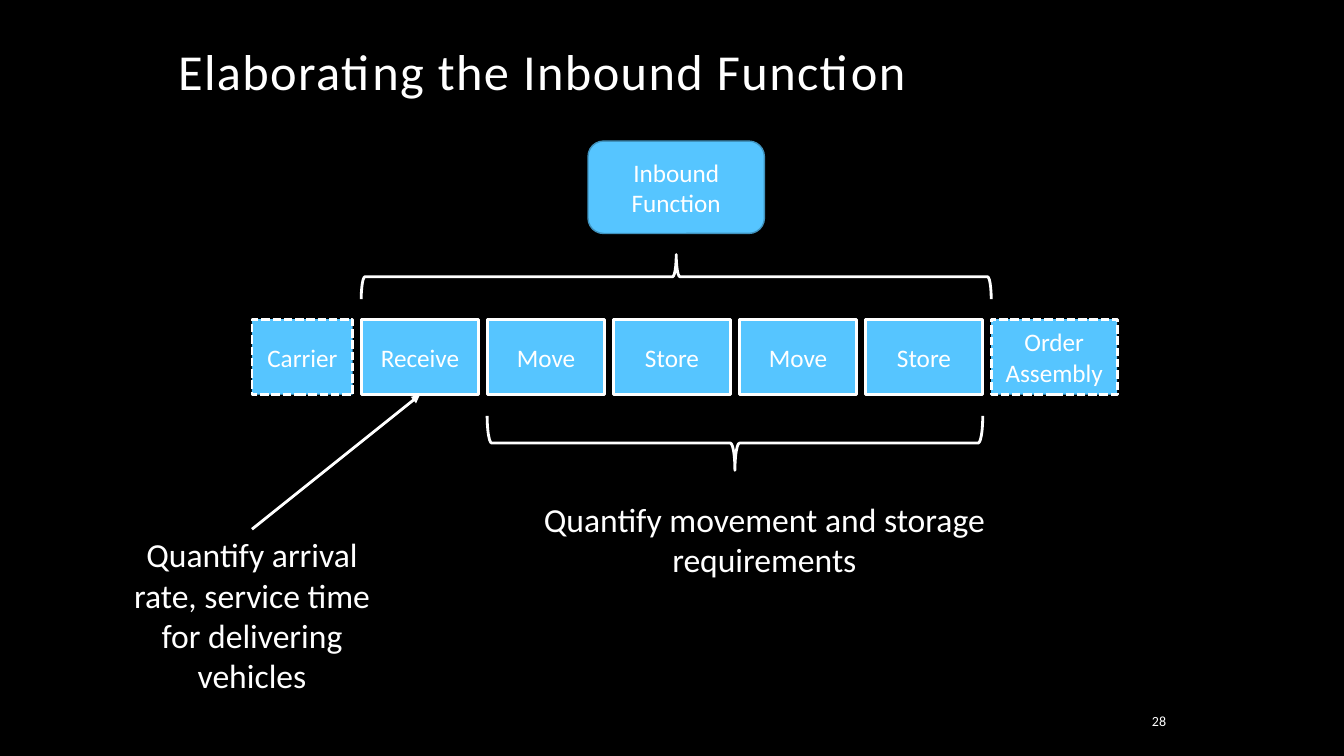
from lxml.etree import SubElement
from pptx import Presentation
from pptx.dml.color import RGBColor
from pptx.enum.dml import MSO_LINE
from pptx.enum.shapes import MSO_CONNECTOR, MSO_SHAPE
from pptx.enum.text import MSO_ANCHOR, MSO_AUTO_SIZE, PP_ALIGN
from pptx.oxml.ns import qn
from pptx.util import Inches, Pt

COLORS = {"background": "000000", "text": "FFFFFF", "box": "56C5FF", "edge": "4092BD"}
GRID = Inches(1) / 12  # the slide is 160 columns by 90 rows
COLUMNS, ROWS = 160, 90
STEP_TOP, STEP_HEIGHT, GAP = 38, 9, 1
STEPS = [("Carrier", 12, True), ("Receive", 14, False), ("Move", 14, False),
         ("Store", 14, False), ("Move", 14, False), ("Store", 14, False),
         ("Order Assembly", 15, True)]


def color(name):
    return RGBColor.from_string(COLORS[name])


def grid(*lengths):
    return [round(length * GRID) for length in lengths]


class FlowSlide:
    def __init__(self, presentation):
        self.slide = presentation.slides.add_slide(presentation.slide_layouts[5])
        self.shapes = self.slide.shapes
        fill = self.slide.background.fill
        fill.solid()
        fill.fore_color.rgb = color("background")

    def fill_text(self, shape, text, size, align=PP_ALIGN.CENTER, **frame_format):
        frame = shape.text_frame
        for name, value in {"word_wrap": True, **frame_format}.items():
            setattr(frame, name, value)
        paragraph = frame.paragraphs[0]
        paragraph.alignment = align
        run = paragraph.add_run()
        run.text = text
        for name, value in {"name": "Calibri", "size": Pt(size)}.items():
            setattr(run.font, name, value)
        run.font.color.rgb = color("text")
        return paragraph

    def title(self, text, *place):
        shape = self.shapes.title
        shape.left, shape.top, shape.width, shape.height = grid(*place)
        paragraph = self.fill_text(shape, text, 36, PP_ALIGN.LEFT,
                                   vertical_anchor=MSO_ANCHOR.TOP,
                                   auto_size=MSO_AUTO_SIZE.NONE)
        paragraph.line_spacing = 0.9
        paragraph.runs[0].font._element.set("spc", "100")

    def outline(self, shape, name="text", width=2, dashed=False):
        shape.line.color.rgb = color(name)
        shape.line.width = Pt(width)
        if dashed:
            shape.line.dash_style = MSO_LINE.SQUARE_DOT

    def box(self, text, *place, kind=MSO_SHAPE.RECTANGLE, **line_format):
        shape = self.shapes.add_shape(kind, *grid(*place))
        shape.shadow.inherit = False
        shape.fill.solid()
        shape.fill.fore_color.rgb = color("box")
        self.outline(shape, **line_format)
        self.fill_text(shape, text, 18, vertical_anchor=MSO_ANCHOR.MIDDLE)
        return shape

    def text(self, text, *place, size=24, **text_format):
        shape = self.shapes.add_textbox(*grid(*place))
        self.fill_text(shape, text, size, **text_format)
        return shape

    def brace(self, left, top, width, height, rotation):
        """Turn a left brace so that it fills the given horizontal area."""
        shift = (width - height) / 2
        shape = self.shapes.add_shape(
            MSO_SHAPE.LEFT_BRACE, *grid(left + shift, top - shift, height, width))
        shape.rotation = rotation
        shape.shadow.inherit = False
        shape.fill.background()
        self.outline(shape)

    def arrow(self, start, start_side, end, end_side):
        connector = self.shapes.add_connector(MSO_CONNECTOR.STRAIGHT, 0, 0, 0, 0)
        connector.begin_connect(start, start_side)
        connector.end_connect(end, end_side)
        self.outline(connector)
        properties = connector._element.spPr
        SubElement(properties.get_or_add_ln(), qn("a:tailEnd"), type="triangle")
        SubElement(properties, qn("a:effectLst"))


def main():
    presentation = Presentation()
    presentation.slide_width, presentation.slide_height = grid(COLUMNS, ROWS)
    flow = FlowSlide(presentation)
    flow.title("Elaborating the Inbound Function", 20, 5, 120, 18)

    steps = []
    left = 30
    for label, width, dashed in STEPS:
        steps.append(flow.box(label, left, STEP_TOP, width, STEP_HEIGHT, dashed=dashed))
        left += width + GAP

    arrival = flow.text("Quantify arrival rate, service time for delivering vehicles",
                        13, 63, 34, 20.6, auto_size=MSO_AUTO_SIZE.SHAPE_TO_FIT_TEXT)
    flow.arrow(arrival, 0, steps[1], 2)
    flow.brace(58, 49.5, 59, 6.5, 270)
    flow.text("Quantify movement and storage requirements", 60, 58.8, 62, 10.9,
              auto_size=MSO_AUTO_SIZE.SHAPE_TO_FIT_TEXT)
    flow.box("Inbound Function", 70, 16.8, 21, 11,
             kind=MSO_SHAPE.ROUNDED_RECTANGLE, name="edge", width=1)
    flow.brace(43, 30.3, 75, 5.3, 90)
    flow.text("28", 129, 84, 11, 3.6, size=10, align=PP_ALIGN.RIGHT,
              vertical_anchor=MSO_ANCHOR.MIDDLE)
    presentation.save("out.pptx")


if __name__ == "__main__":
    main()
